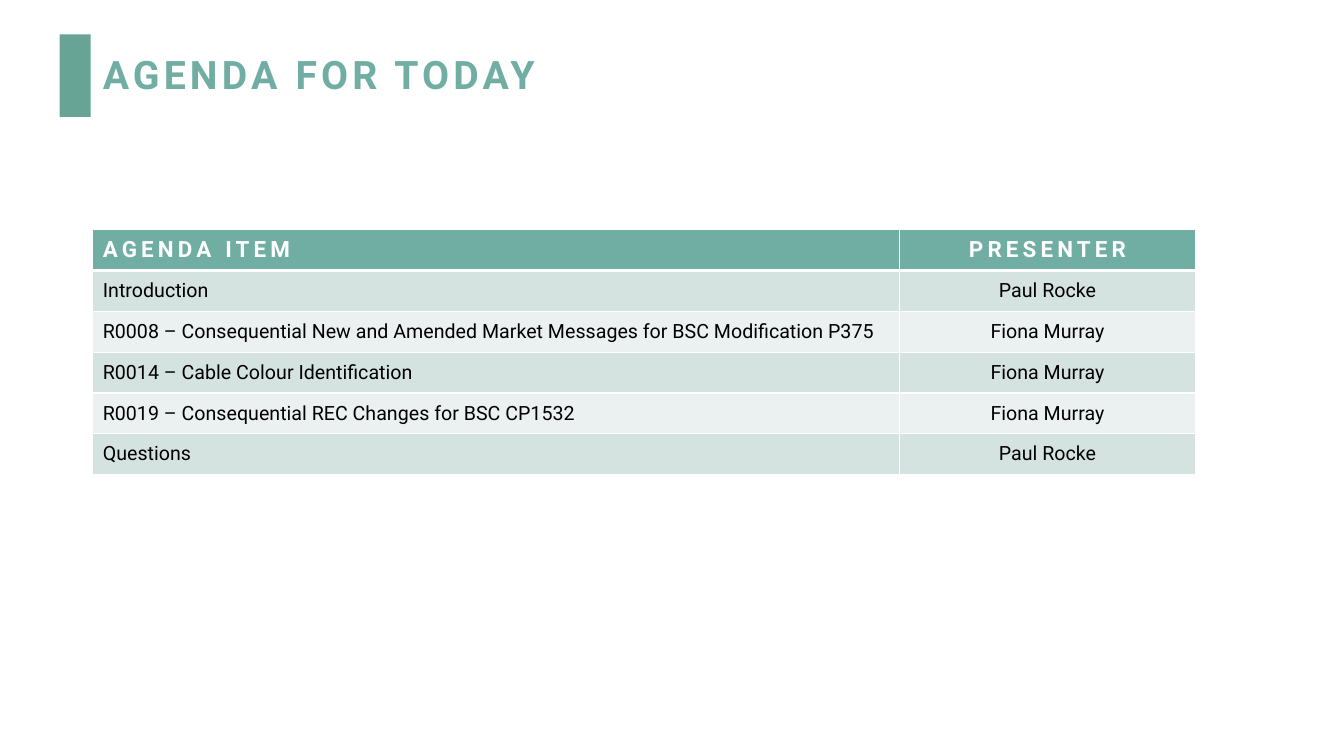
from lxml.etree import SubElement as Sub
from pptx import Presentation
from pptx.dml.color import RGBColor
from pptx.enum.shapes import MSO_SHAPE as Shape
from pptx.enum.text import MSO_ANCHOR as Anchor, MSO_AUTO_SIZE as Fit, PP_ALIGN as Align
from pptx.oxml.ns import qn
from pptx.util import Inches, Pt

TITLE = "AGENDA FOR TODAY"
ROWS = [
    ("AGENDA ITEM", "PRESENTER"),
    ("Introduction", "Paul Rocke"),
    ("R0008 – Consequential New and Amended Market Messages for BSC Modification P375", "Fiona Murray"),
    ("R0014 – Cable Colour Identification", "Fiona Murray"),
    ("R0019 – Consequential REC Changes for BSC CP1532", "Fiona Murray"),
    ("Questions", "Paul Rocke"),
]
WIDTHS = (8, 2.94)
ALIGNS = (Align.LEFT, Align.CENTER)
LEFT, TOP, HIGH = 0.92, 2.28, 2.43

WHITE = RGBColor(0xFF, 0xFF, 0xFF)
BLACK = RGBColor(0, 0, 0)
TEAL = RGBColor(0x70, 0xAD, 0xA3)
GREEN = RGBColor(0x68, 0xA4, 0x95)
PALE = RGBColor(0xEB, 0xF1, 0xF0)
MIST = RGBColor(0xD5, 0xE3, 0xE0)

HEAD = {"name": "Roboto", "size": Pt(16), "bold": True, "color": WHITE, "space": 3}
BODY = {**HEAD, "size": Pt(14), "bold": False, "color": BLACK, "space": 0}
MAIN = {**HEAD, "size": Pt(28), "color": TEAL}


def write(frame, text, form, align=Align.LEFT):
    para = frame.paragraphs[0]
    para.alignment = align
    run = para.add_run()
    run.text = text
    for key, value in form.items():
        if key == "color":
            run.font.color.rgb = value
        elif key == "space":
            run.font._element.set("spc", str(value * 100))
        else:
            setattr(run.font, key, value)
    return para


def edge(cell, base):
    props = cell._tc.get_or_add_tcPr()
    for side in "LRTB":
        width = Pt(base if side == "B" else 1)
        line = Sub(props, qn(f"a:ln{side}"), w=str(width))
        fill = Sub(line, qn("a:solidFill"))
        Sub(fill, qn("a:srgbClr"), val=str(WHITE))


def main():
    deck = Presentation()
    deck.slide_width, deck.slide_height = Inches(13.33), Inches(7.5)
    slide = deck.slides.add_slide(deck.slide_layouts[5])

    bar = slide.shapes.add_shape(Shape.RECTANGLE, *map(Inches, (0.59, 0.34, 0.31, 0.82)))
    bar.shadow.inherit = False
    bar.fill.solid()
    bar.fill.fore_color.rgb = GREEN
    bar.line.fill.background()

    title = slide.shapes.title
    title.left, title.top, title.width, title.height = map(Inches, (LEFT, 0.4, 10.15, 0.72))
    frame = title.text_frame
    frame.auto_size = Fit.NONE
    frame.vertical_anchor = Anchor.MIDDLE
    write(frame, TITLE, MAIN).line_spacing = 0.9

    size = (LEFT, TOP, sum(WIDTHS), HIGH)
    table = slide.shapes.add_table(len(ROWS), len(WIDTHS), *map(Inches, size)).table
    for col, width in zip(table.columns, WIDTHS):
        col.width = Inches(width)
    for i, row in enumerate(ROWS):
        for j, text in enumerate(row):
            cell = table.cell(i, j)
            edge(cell, 1 if i else 3)
            cell.vertical_anchor = Anchor.MIDDLE
            cell.fill.solid()
            cell.fill.fore_color.rgb = (PALE, MIST)[i % 2] if i else TEAL
            write(cell.text_frame, text, BODY if i else HEAD, ALIGNS[j])

    deck.save("out.pptx")


if __name__ == "__main__":
    main()
